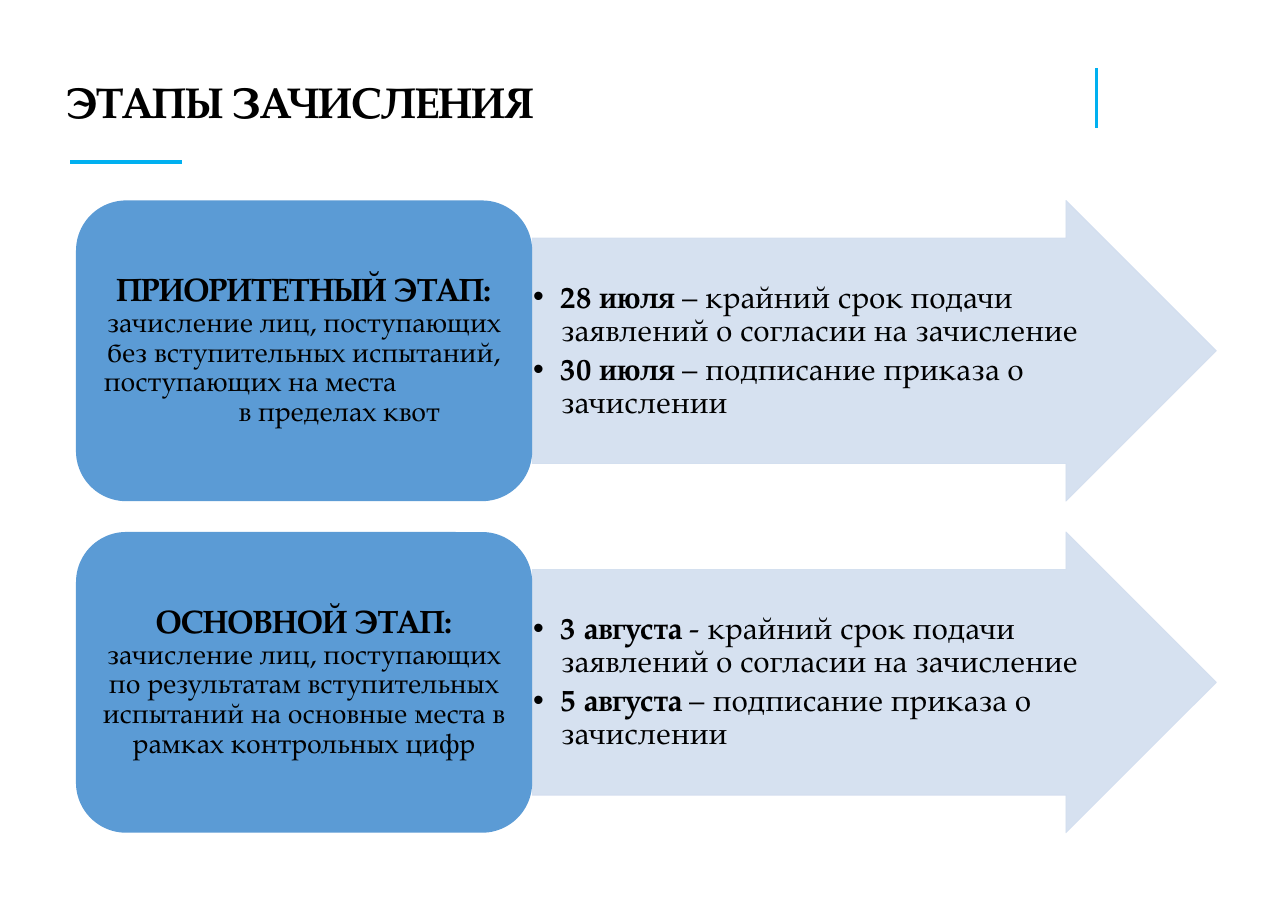
from lxml.etree import SubElement
from pptx import Presentation
from pptx.dml.color import RGBColor
from pptx.enum.shapes import MSO_CONNECTOR, MSO_SHAPE
from pptx.enum.text import MSO_ANCHOR, PP_ALIGN
from pptx.oxml.ns import qn
from pptx.util import Inches, Pt

FONT = "TeX Gyre Pagella"
LEFT, TOP, ROW_H, GAP = 0.69, 1.82, 2.73, 0.28
BOX_W, ARROW_W = 4.14, 6.21


def color(hex_code):
    return RGBColor.from_string(hex_code)


def write(tf, runs, first=False, align=PP_ALIGN.LEFT, margin=0, bullet=False, before=0):
    """Add a paragraph of (text, size, bold) runs to a text frame."""
    p = tf.paragraphs[0] if first else tf.add_paragraph()
    p.alignment, p.line_spacing, p.space_before = align, 0.9, Pt(before)
    pPr = p._p.get_or_add_pPr()
    pPr.set("marL", str(Inches(margin)))
    pPr.set("indent", str(Inches(-margin if bullet else 0)))
    if bullet:
        SubElement(pPr, qn("a:buFont"), typeface="Arial")
        SubElement(pPr, qn("a:buChar"), char="•")
    for text, size, bold in runs:
        r = p.add_run()
        r.text = text
        r.font.name, r.font.size, r.font.bold = FONT, Pt(size), bold
        r.font.color.rgb = color("000000")


prs = Presentation()
prs.slide_width, prs.slide_height = Inches(11.69), Inches(8.27)
s = prs.slides.add_slide(prs.slide_layouts[5])

# Accent lines: x1, y1, x2, y2, width
for x1, y1, x2, y2, width in [(0.64, 1.47, 1.65, 1.47, 3), (9.95, 0.62, 9.95, 1.16, 2.25)]:
    line = s.shapes.add_connector(
        MSO_CONNECTOR.STRAIGHT, Inches(x1), Inches(y1), Inches(x2), Inches(y2))
    line.line.color.rgb, line.line.width = color("00B0F0"), Pt(width)
    SubElement(line._element.spPr, qn("a:effectLst"))

# Title
title = s.shapes.title
title.left, title.top, title.width, title.height = map(Inches, (0.49, 0.22, 9.31, 1.45))
tf = title.text_frame
tf.vertical_anchor = MSO_ANCHOR.MIDDLE
tf.margin_left = tf.margin_right = Inches(0.11)
tf.margin_top = tf.margin_bottom = Inches(0.06)
write(tf, [("ЭТАПЫ ЗАЧИСЛЕНИЯ", 28, True)], first=True)

# Stages: heading, description, offset last lines (text, alignment, margin), dates
stages = [
    ("ПРИОРИТЕТНЫЙ ЭТАП: ",
     "зачисление лиц, поступающих без вступительных испытаний,",
     [("поступающих на места", PP_ALIGN.LEFT, 0.03),
      ("в пределах квот", PP_ALIGN.CENTER, 0.64)],
     [("28 июля ", "– крайний срок подачи заявлений о согласии на зачисление"),
      ("30 июля ", "– подписание приказа о зачислении")]),
    ("ОСНОВНОЙ ЭТАП: ",
     "зачисление лиц, поступающих по результатам вступительных "
     "испытаний на основные места в рамках контрольных цифр",
     [],
     [("3 августа ", "- крайний срок подачи заявлений о согласии на зачисление"),
      ("5 августа ", "– подписание приказа о зачислении")]),
]

for row, (heading, description, last_lines, dates) in enumerate(stages):
    y = TOP + row * (ROW_H + GAP)

    # Arrow with dates
    sp = s.shapes.add_shape(MSO_SHAPE.RIGHT_ARROW, Inches(LEFT + BOX_W), Inches(y),
                            Inches(ARROW_W), Inches(ROW_H))
    sp.shadow.inherit = False
    sp.adjustments[0], sp.adjustments[1] = 0.75, 0.5
    sp.fill.solid()
    sp.fill.fore_color.rgb = sp.line.color.rgb = color("D2DEEF")
    sp.line.width = Pt(0.5)
    for clr in sp._element.spPr.iter(qn("a:srgbClr")):
        SubElement(clr, qn("a:alpha"), val="90000")
    tf = sp.text_frame
    tf.word_wrap, tf.vertical_anchor = True, MSO_ANCHOR.MIDDLE
    tf.margin_left = tf.margin_right = tf.margin_top = tf.margin_bottom = Inches(0.01)
    for i, (date, event) in enumerate(dates):
        write(tf, [(date, 20, True), (event, 20, False)], first=i == 0,
              margin=0.25, bullet=True, before=4 * i)

    # Rounded box with the stage
    sp = s.shapes.add_shape(MSO_SHAPE.ROUNDED_RECTANGLE, Inches(LEFT), Inches(y),
                            Inches(BOX_W), Inches(ROW_H))
    sp.shadow.inherit = False
    sp.fill.solid()
    sp.fill.fore_color.rgb = color("5B9BD5")
    sp.line.fill.background()
    tf = sp.text_frame
    tf.word_wrap, tf.vertical_anchor = True, MSO_ANCHOR.MIDDLE
    tf.margin_left = tf.margin_right = Inches(0.09)
    tf.margin_top = tf.margin_bottom = Inches(0.04)
    write(tf, [(heading, 21, True), (description, 18, False)], first=True,
          align=PP_ALIGN.CENTER)
    for text, align, margin in last_lines:
        write(tf, [(text, 18, False)], align=align, margin=margin)

prs.save("out.pptx")
